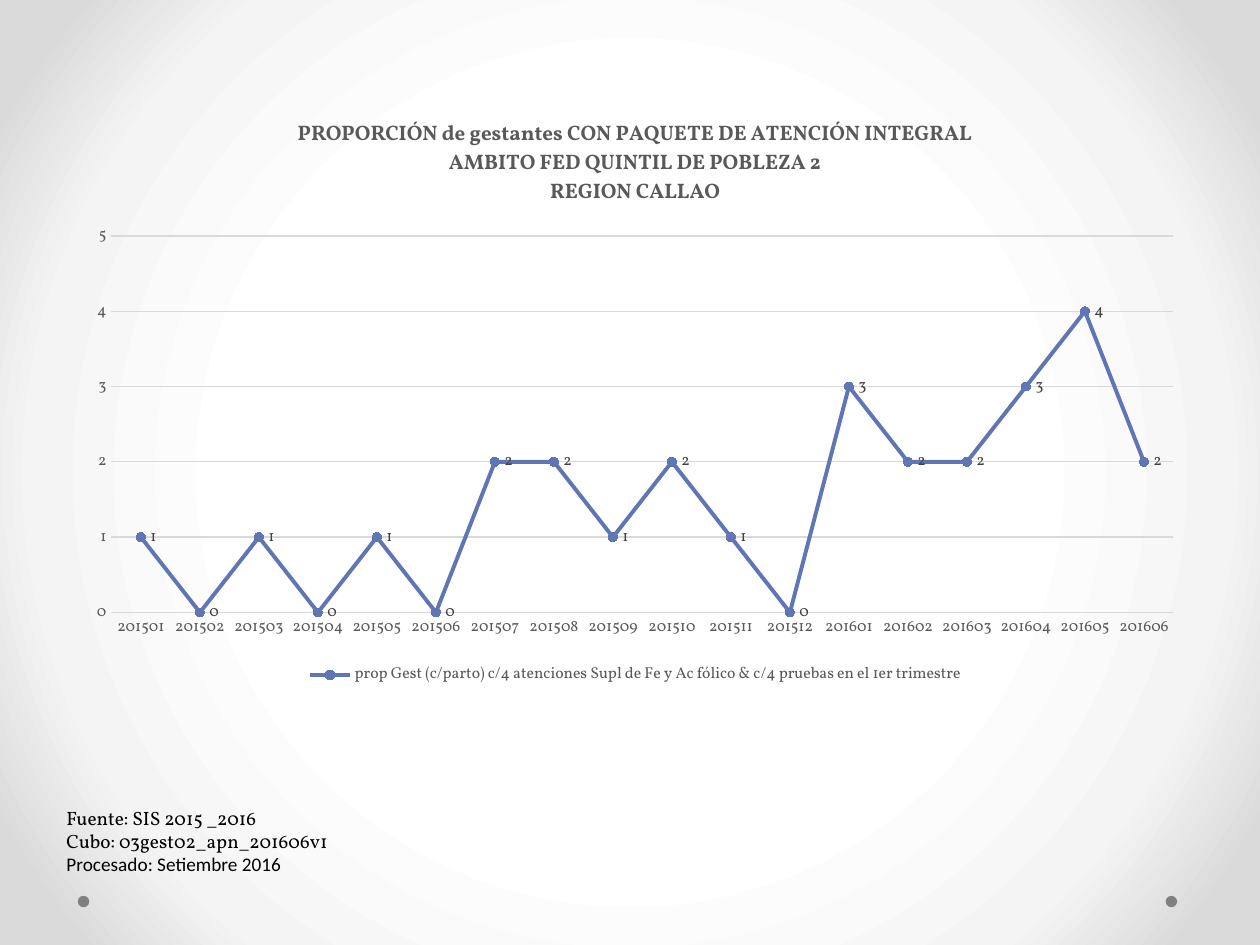
import pptx
import pptx.chart.data
import pptx.dml.color
import pptx.enum.chart
import pptx.enum.shapes
import pptx.oxml
import pptx.oxml.ns
import pptx.util

Cm = pptx.util.Cm
Pt = pptx.util.Pt
RGB = pptx.dml.color.RGBColor
enum = pptx.enum.chart
qn = pptx.oxml.ns.qn

BLACK = RGB(0x00, 0x00, 0x00)
DARK = RGB(0x40, 0x40, 0x40)
GREY = RGB(0x59, 0x59, 0x59)
DOT = RGB(0x80, 0x80, 0x80)
GRID = RGB(0xD9, 0xD9, 0xD9)
BLUE = RGB(0x60, 0x76, 0xB4)
GLOW = [(50, "FFFFFF"), (76, "F4F4F4"), (92, "DADADA")]

TITLE = [
    "PROPORCIÓN de gestantes CON PAQUETE DE ATENCIÓN INTEGRAL",
    "AMBITO FED QUINTIL DE POBLEZA 2",
    "REGION CALLAO",
]
SERIES = ("prop Gest (c/parto) c/4 atenciones Supl de Fe y Ac fólico "
          "& c/4 pruebas en el 1er trimestre")
MONTHS = [f"2015{m:02}" for m in range(1, 13)] + [f"2016{m:02}" for m in range(1, 7)]
VALUES = [1, 0, 1, 0, 1, 0, 2, 2, 1, 2, 1, 0, 3, 2, 2, 3, 4, 2]
NOTES = [
    ("Fuente: SIS 2015 _2016", "Vollkorn"),
    ("Cubo: 03gest02_apn_201606v1", "Vollkorn"),
    ("Procesado: Setiembre 2016", "Calibri"),
]


class Page:
    face = "Vollkorn"

    def __init__(self, slide):
        self.slide = slide

    def style(self, font, size, color, face=None, bold=False):
        font.name = face or self.face
        font.size = Pt(size)
        font.bold = bold
        font.color.rgb = color

    def glow(self, stops):
        """Fill the background with a gradient that spreads from the centre."""
        self.slide.background.fill.gradient()
        grad = self.slide.element.find(".//" + qn("a:gradFill"))
        marks = "".join(f'<a:gs pos="{pos * 1000}"><a:srgbClr val="{color}"/></a:gs>'
                        for pos, color in stops)
        new = pptx.oxml.parse_xml(
            f'<a:gradFill {pptx.oxml.ns.nsdecls("a")} rotWithShape="1">'
            f'<a:gsLst>{marks}</a:gsLst><a:path path="circle">'
            '<a:fillToRect l="50000" t="50000" r="50000" b="50000"/>'
            '</a:path></a:gradFill>')
        grad.getparent().replace(grad, new)

    def dot(self, x, y, size):
        dot = self.slide.shapes.add_shape(
            pptx.enum.shapes.MSO_SHAPE.OVAL, Cm(x), Cm(y), Cm(size), Cm(size))
        dot.shadow.inherit = False
        dot.fill.solid()
        dot.fill.fore_color.rgb = DOT
        dot.line.fill.background()

    def text(self, x, y, w, h, lines, size):
        frame = self.slide.shapes.add_textbox(Cm(x), Cm(y), Cm(w), Cm(h)).text_frame
        frame.word_wrap = True
        for i, (line, face) in enumerate(lines):
            para = frame.add_paragraph() if i else frame.paragraphs[0]
            run = para.add_run()
            run.text = line
            self.style(run.font, size, BLACK, face)

    def chart(self, x, y, w, h):
        data = pptx.chart.data.CategoryChartData(number_format="0")
        data.categories = MONTHS
        data.add_series(SERIES, VALUES)
        chart = self.slide.shapes.add_chart(
            enum.XL_CHART_TYPE.LINE_MARKERS, Cm(x), Cm(y), Cm(w), Cm(h), data).chart
        self.style(chart.font, 10, BLACK)
        self.head(chart)
        self.axes(chart)
        self.line(chart.plots[0])
        self.place(chart, x=0.033, y=0.236, w=0.947, h=0.633)
        chart.has_legend = True
        chart.legend.position = enum.XL_LEGEND_POSITION.BOTTOM
        chart.legend.include_in_layout = False
        self.style(chart.legend.font, 9, GREY)

    def head(self, chart):
        chart.has_title = True
        frame = chart.chart_title.text_frame
        for i, line in enumerate(TITLE):
            para = frame.add_paragraph() if i else frame.paragraphs[0]
            run = para.add_run()
            run.text = line
            self.style(run.font, 12, GREY, bold=True)

    def axes(self, chart):
        cat, val = chart.category_axis, chart.value_axis
        for axis in (cat, val):
            axis.major_tick_mark = axis.minor_tick_mark = enum.XL_TICK_MARK.NONE
            self.style(axis.tick_labels.font, 9, GREY)
        val.minimum_scale, val.maximum_scale, val.major_unit = 0, 5, 1
        val.tick_labels.number_format = "0"
        val.tick_labels.number_format_is_linked = False
        val.format.line.fill.background()
        val.has_major_gridlines = True
        for line in (cat.format.line, val.major_gridlines.format.line):
            line.color.rgb = GRID
            line.width = Pt(0.75)

    def line(self, plot):
        plot.vary_by_categories = False
        series = plot.series[0]
        series.smooth = False
        series.format.line.color.rgb = BLUE
        series.format.line.width = Pt(2.25)
        mark = series.marker
        mark.style = enum.XL_MARKER_STYLE.CIRCLE
        mark.size = 5
        mark.format.fill.solid()
        mark.format.fill.fore_color.rgb = BLUE
        mark.format.line.color.rgb = BLUE
        labels = series.data_labels
        labels.show_value = True
        labels.number_format = "0"
        labels.number_format_is_linked = False
        labels.position = enum.XL_LABEL_POSITION.RIGHT
        self.style(labels.font, 9, DARK)

    def place(self, chart, **box):
        """Fix the inner plot area, in fractions of the chart."""
        area = chart.element.find(".//" + qn("c:plotArea"))
        old = area.find(qn("c:layout"))
        if old is not None:
            area.remove(old)
        sizes = "".join(f'<c:{key} val="{val}"/>' for key, val in box.items())
        area.insert(0, pptx.oxml.parse_xml(
            f'<c:layout {pptx.oxml.ns.nsdecls("c")}><c:manualLayout>'
            '<c:layoutTarget val="inner"/><c:xMode val="edge"/><c:yMode val="edge"/>'
            f'{sizes}</c:manualLayout></c:layout>'))


def main():
    deck = pptx.Presentation()
    deck.slide_width, deck.slide_height = Cm(25.4), Cm(19.05)
    page = Page(deck.slides.add_slide(deck.slide_layouts[6]))
    page.glow(GLOW)
    for x in (23.5, 1.57):
        page.dot(x, 18.06, 0.23)
    page.text(1.09, 16.13, 8.2, 1.68, NOTES, 11)
    page.chart(1.5, 1.93, 22.61, 11.99)
    deck.save("out.pptx")


if __name__ == "__main__":
    main()
